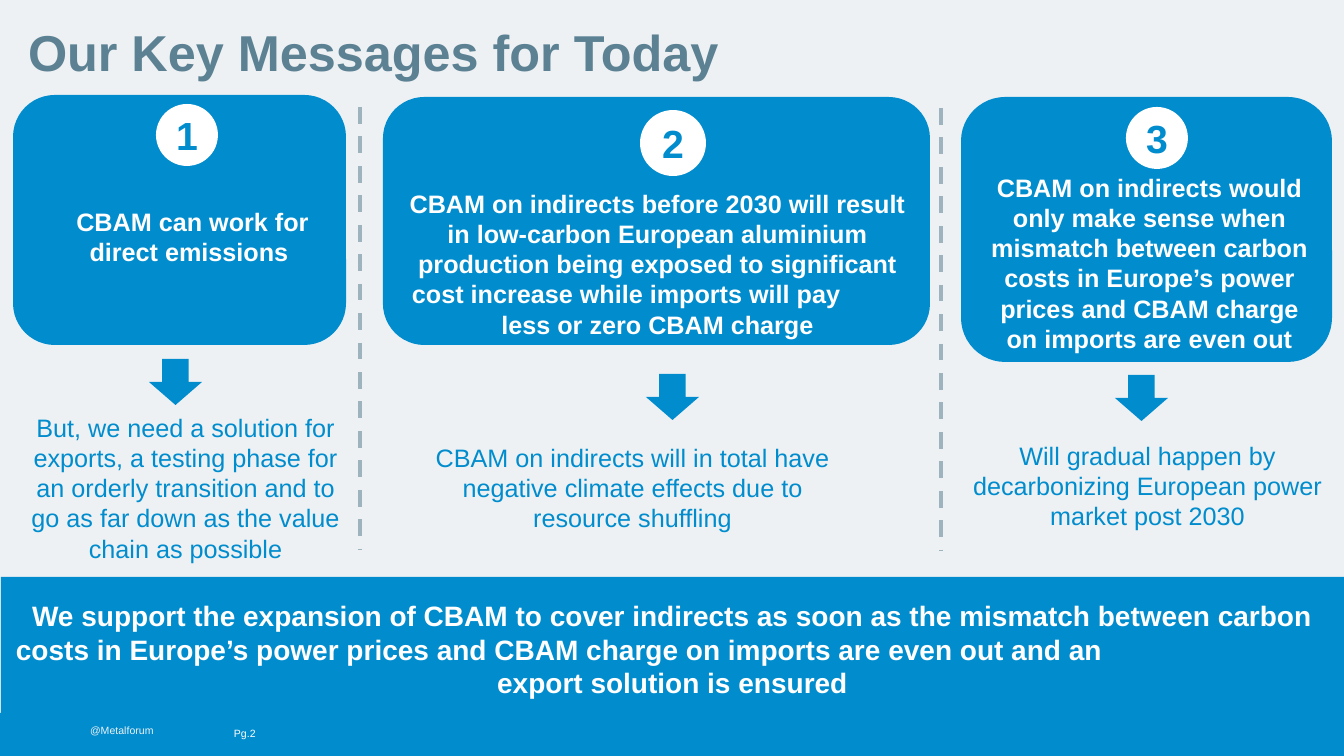
from lxml import etree
from pptx import Presentation
from pptx import util as u
from pptx.dml.color import RGBColor
from pptx.enum import dml, shapes, text
from pptx.oxml.ns import qn

PX = 914400 / 100.8
COLORS = {"blue": "008CCD", "pale": "EDF1F4", "slate": "5C8193", "dash": "9DB3BE", "white": "FFFFFF"}
KIND = shapes.MSO_SHAPE
CENTER, LEFT = text.PP_ALIGN.CENTER, text.PP_ALIGN.LEFT


def block(kind, box, fill):
    item = board.add_shape(kind, *[round(v * PX) for v in box])
    item.shadow.inherit = False
    item.fill.solid()
    item.fill.fore_color.rgb = RGBColor.from_string(COLORS[fill])
    item.line.fill.background()
    return item


def write(item, lines, size, color, bold=False, inset=None, anchor=text.MSO_ANCHOR.TOP):
    frame = item.text_frame
    frame.word_wrap = True
    frame.auto_size = text.MSO_AUTO_SIZE.NONE
    frame.vertical_anchor = anchor
    if inset is not None:
        frame.margin_left = frame.margin_top = frame.margin_right = frame.margin_bottom = inset
    for i, (words, align, indent) in enumerate(lines):
        paragraph = frame.paragraphs[0] if i == 0 else frame.add_paragraph()
        paragraph.alignment = align
        if indent:
            paragraph._p.get_or_add_pPr().set("marL", str(round(indent * PX)))
        run = paragraph.add_run()
        run.text = words
        run.font.name = "Arial"
        run.font.size = u.Pt(size)
        run.font.bold = bold
        run.font.color.rgb = RGBColor.from_string(COLORS[color])


deck = Presentation()
deck.slide_width, deck.slide_height = round(1344 * PX), round(756 * PX)
slide = deck.slides.add_slide(deck.slide_layouts[5])
board = slide.shapes
slide.background.fill.solid()
slide.background.fill.fore_color.rgb = RGBColor.from_string(COLORS["pale"])

heading = board.title
heading.left, heading.top, heading.width, heading.height = [round(v * PX) for v in (28, 28, 1226, 81)]
write(heading, [("Our Key Messages for Today", LEFT, 0)], 36, "slate", True, 0)
heading.text_frame.paragraphs[0].line_spacing = 0.9

block(KIND.RECTANGLE, (0, 713, 1344, 43), "blue")
conclusion = block(KIND.RECTANGLE, (1, 577, 1343, 144), "blue")
write(conclusion, [
    ("We support the expansion of CBAM to cover indirects as soon as the mismatch between carbon", CENTER, 0),
    ("costs in Europe’s power prices and CBAM charge on imports are even out and an", LEFT, 5),
    ("export solution is ensured", CENTER, 0),
], 20, "white", True, anchor=text.MSO_ANCHOR.MIDDLE)

messages = [
    ((13, 95, 333, 250), (156, 104, 62), (40, 201, 305, 72),
     [("CBAM can work for direct emissions ", CENTER, 0)],
     (149, 359), (13, 407, 345, 164),
     "But, we need a solution for exports, a testing phase for an orderly transition "
     "and to go as far down as the value chain as possible"),
    ((383, 97, 547, 248), (640, 110, 66), (389, 183, 537, 163),
     [("CBAM on indirects before 2030 will result in low-carbon European aluminium "
       "production being exposed to significant", CENTER, 0),
      ("cost increase while imports will pay", LEFT, 13),
      ("less or zero CBAM charge", CENTER, 0)],
     (646, 374), (415, 437, 435, 133),
     "CBAM on indirects will in total have negative climate effects due to resource shuffling"),
    ((961, 97, 371, 265), (1126, 107, 62), (976, 167, 347, 194),
     [("CBAM on indirects would only make sense when mismatch between carbon costs in "
       "Europe’s power prices and CBAM charge on imports are even out", CENTER, 0)],
     (1115, 375), (951, 435, 393, 102),
     "Will gradual happen by decarbonizing European power market post 2030"),
]
for number, (card, badge, claim_box, claim, arrow, outcome_box, outcome) in enumerate(messages, 1):
    block(KIND.ROUNDED_RECTANGLE, card, "blue")
    circle = block(KIND.OVAL, (*badge, badge[2]), "white")
    write(circle, [(str(number), CENTER, 0)], 28, "blue", True, anchor=text.MSO_ANCHOR.MIDDLE)
    write(board.add_textbox(*[round(v * PX) for v in claim_box]), claim, 18, "white", True)
    block(KIND.DOWN_ARROW, (*arrow, 53, 46), "blue")
    write(board.add_textbox(*[round(v * PX) for v in outcome_box]), [(outcome, CENTER, 0)], 18, "blue")

for x, top in ((360, 107), (941, 108)):
    divider = board.add_connector(shapes.MSO_CONNECTOR.STRAIGHT, *[round(v * PX) for v in (x, top, x, top + 442)])
    divider.line.color.rgb = RGBColor.from_string(COLORS["dash"])
    divider.line.width = u.Pt(3)
    divider.line.dash_style = dml.MSO_LINE.DASH
    etree.SubElement(divider._element.spPr, qn("a:effectLst"))

for words, box, color, anchor in (
    ("@Metalforum", (90, 724, 123, 13), "pale", text.MSO_ANCHOR.TOP),
    ("Pg.2", (234, 718, 55, 30), "white", text.MSO_ANCHOR.MIDDLE),
):
    write(board.add_textbox(*[round(v * PX) for v in box]), [(words, LEFT, 0)], 7.5, color, inset=0, anchor=anchor)

deck.save("out.pptx")
